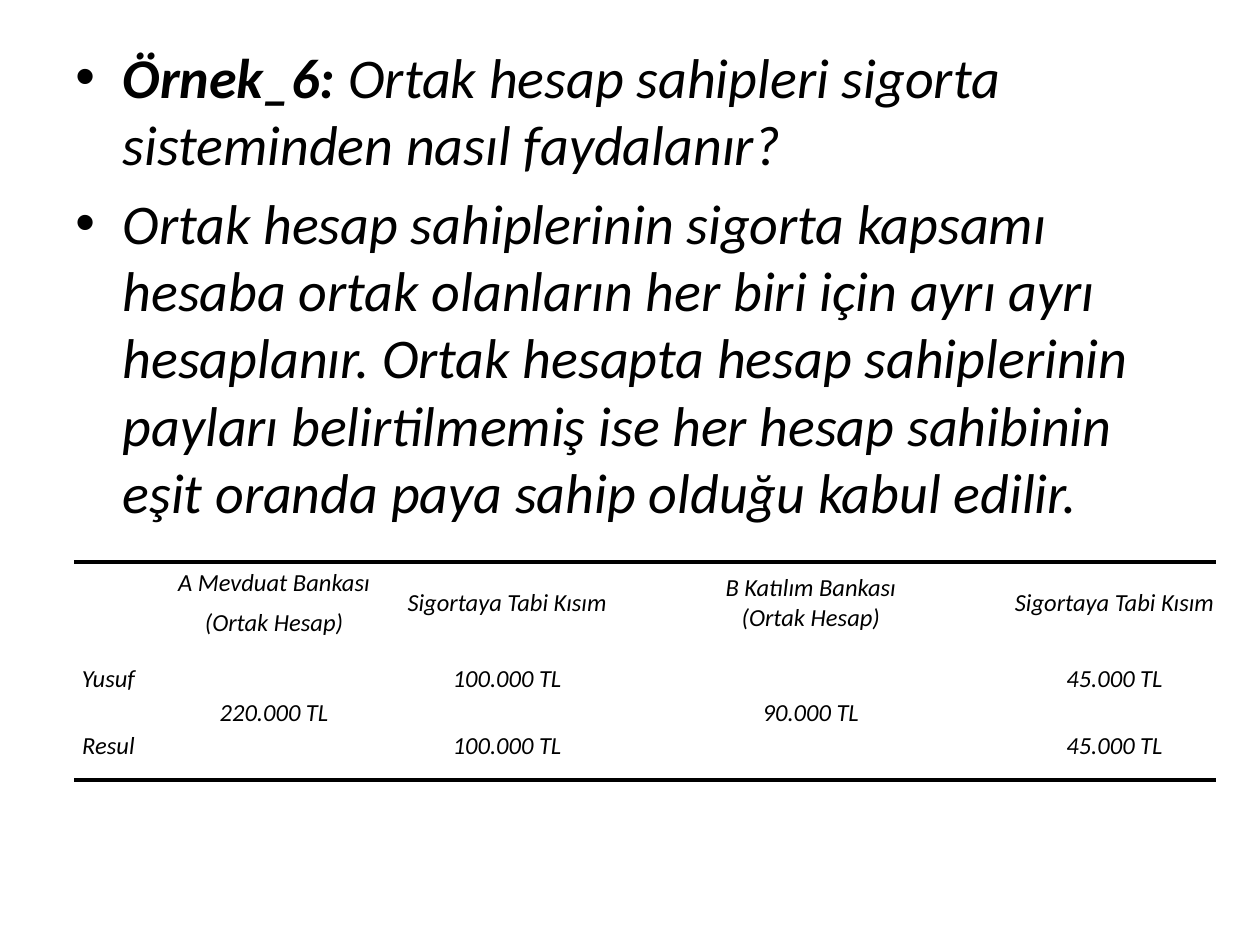
from dataclasses import dataclass

from lxml import etree
from pptx import Presentation
from pptx.dml.color import RGBColor
from pptx.enum.text import MSO_ANCHOR, PP_ALIGN
from pptx.oxml.ns import qn
from pptx.util import Pt

CENTER = PP_ALIGN.CENTER
MIDDLE = MSO_ANCHOR.MIDDLE
BLANK_LAYOUT = 6
COLORS = {"text": "000000", "rule": "000000"}
BODY_FONT = {"name": "Calibri", "size": Pt(32), "italic": True}
CELL_FONT = {"name": "Calibri", "size": Pt(14), "italic": True}
CELL_LAYOUT = {"margin_left": 0, "margin_right": 0, "margin_top": 0,
               "margin_bottom": 0, "vertical_anchor": MIDDLE}
COLUMN_WIDTHS = (39, 130.3, 136.1, 211, 136.1)
ROW_HEIGHTS = (47.4, 38.7, 38.7)
CELL_INDENT = 20
RULE_WIDTH = 2.5


@dataclass
class Entry:
    row: int
    column: int
    lines: tuple[str, ...]
    indent: float = CELL_INDENT
    first_gap: float = 6
    row_span: int = 1


BULLETS = (
    (("Örnek_6: ", True),
     ("Ortak hesap sahipleri sigorta sisteminden nasıl faydalanır?", False)),
    (("Ortak hesap sahiplerinin sigorta kapsamı hesaba ortak olanların her biri "
      "için ayrı ayrı hesaplanır. Ortak hesapta hesap sahiplerinin payları "
      "belirtilmemiş ise her hesap sahibinin eşit oranda paya sahip olduğu "
      "kabul edilir.", False),),
)
ENTRIES = (
    Entry(0, 1, ("A Mevduat Bankası", "(Ortak Hesap)")),
    Entry(0, 2, ("Sigortaya Tabi Kısım",)),
    Entry(0, 3, ("B Katılım Bankası", "(Ortak Hesap)"), first_gap=0),
    Entry(0, 4, ("Sigortaya Tabi Kısım",)),
    Entry(1, 0, ("Yusuf",), indent=0),
    Entry(1, 1, ("220.000 TL",), row_span=2),
    Entry(1, 2, ("100.000 TL",)),
    Entry(1, 3, ("90.000 TL",), row_span=2),
    Entry(1, 4, ("45.000 TL",)),
    Entry(2, 0, ("Resul",), indent=0),
    Entry(2, 2, ("100.000 TL",)),
    Entry(2, 4, ("45.000 TL",)),
)


def apply(target, values: dict) -> None:
    for name, value in values.items():
        setattr(target, name, value)


def add_span(para, text: str, font: dict, bold: bool = False) -> None:
    span = para.add_run()
    span.text = text
    apply(span.font, {**font, "bold": bold})
    span.font.color.rgb = RGBColor.from_string(COLORS["text"])


def indent_para(para, left: float, first: float):
    properties = para._p.get_or_add_pPr()
    properties.set("marL", str(Pt(left)))
    properties.set("indent", str(Pt(first)))
    return properties


def add_bullets(page) -> None:
    box = page.shapes.add_textbox(Pt(36), Pt(20.9), Pt(648), Pt(289.4))
    frame = box.text_frame
    frame.word_wrap = True
    for index, spans in enumerate(BULLETS):
        para = frame.add_paragraph() if index else frame.paragraphs[0]
        para.space_before = Pt(6.4)
        properties = indent_para(para, 27, -27)
        etree.SubElement(properties, qn("a:buFont"), typeface="Arial")
        etree.SubElement(properties, qn("a:buChar"), char="•")
        for text, bold in spans:
            add_span(para, text, BODY_FONT, bold)


def set_borders(cell, ruled_sides: set[str]) -> None:
    """Rule the given sides (L, R, T, B) and clear the others."""
    properties = cell._tc.get_or_add_tcPr()
    for index, side in enumerate("LRTB"):
        line = etree.Element(qn(f"a:ln{side}"))
        if side in ruled_sides:
            line.set("w", str(Pt(RULE_WIDTH)))
            fill = etree.SubElement(line, qn("a:solidFill"))
            etree.SubElement(fill, qn("a:srgbClr"), val=COLORS["rule"])
        else:
            etree.SubElement(line, qn("a:noFill"))
        properties.insert(index, line)


def fill_entry(table, entry: Entry) -> None:
    cell = table.cell(entry.row, entry.column)
    if entry.row_span > 1:
        cell.merge(table.cell(entry.row + entry.row_span - 1, entry.column))
    apply(cell, CELL_LAYOUT)
    for index, text in enumerate(entry.lines):
        para = cell.text_frame.add_paragraph() if index else cell.text_frame.paragraphs[0]
        is_last = index == len(entry.lines) - 1
        apply(para, {"alignment": CENTER,
                     "space_after": Pt(6 if is_last else entry.first_gap)})
        indent_para(para, 0, entry.indent)
        add_span(para, text, CELL_FONT)


def add_deposit_table(page) -> None:
    table = page.shapes.add_table(
        len(ROW_HEIGHTS), len(COLUMN_WIDTHS), Pt(42.5), Pt(321.1),
        Pt(sum(COLUMN_WIDTHS)), Pt(sum(ROW_HEIGHTS))).table
    apply(table, {"first_row": False, "horz_banding": False})
    for column, width in zip(table.columns, COLUMN_WIDTHS):
        column.width = Pt(width)
    for row, height in zip(table.rows, ROW_HEIGHTS):
        row.height = Pt(height)
    for entry in ENTRIES:
        fill_entry(table, entry)
    last_row = len(ROW_HEIGHTS) - 1
    for row_index, row in enumerate(table.rows):
        for cell in row.cells:
            cell.fill.background()
            sides = {"T"} if row_index == 0 else set()
            if row_index == last_row or cell.is_merge_origin:
                sides.add("B")
            set_borders(cell, sides)


def main() -> None:
    deck = Presentation()
    apply(deck, {"slide_width": Pt(720), "slide_height": Pt(540)})
    page = deck.slides.add_slide(deck.slide_layouts[BLANK_LAYOUT])
    add_bullets(page)
    add_deposit_table(page)
    deck.save("out.pptx")


if __name__ == "__main__":
    main()
